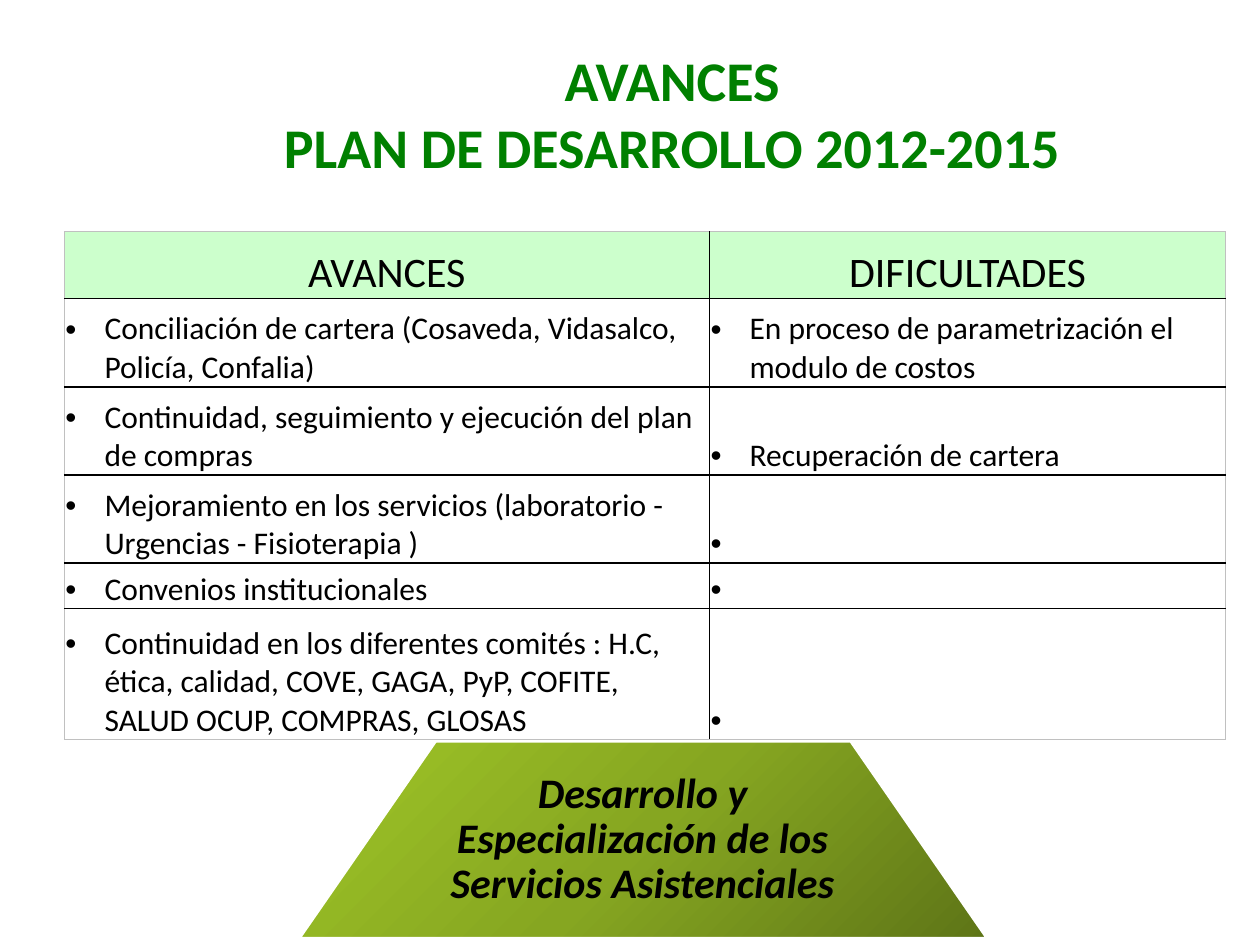
from lxml import etree
from pptx import Presentation
from pptx.dml.color import RGBColor
from pptx.enum.shapes import MSO_SHAPE
from pptx.enum.text import MSO_ANCHOR, MSO_AUTO_SIZE, PP_ALIGN
from pptx.oxml.ns import qn
from pptx.util import Inches, Pt

TRAPEZOID = MSO_SHAPE.TRAPEZOID
BOTTOM, MIDDLE, TOP = MSO_ANCHOR.BOTTOM, MSO_ANCHOR.MIDDLE, MSO_ANCHOR.TOP
GROW = MSO_AUTO_SIZE.SHAPE_TO_FIT_TEXT
LEFT, CENTER = PP_ALIGN.LEFT, PP_ALIGN.CENTER


def rgb(code):
    return RGBColor.from_string(code)


def write(frame, text, font="Calibri", size=18, color="000000", bold=False,
          italic=False, align=LEFT, spacing=None, bullet=None):
    for number, line in enumerate(text.split("\n")):
        paragraph = frame.add_paragraph() if number else frame.paragraphs[0]
        paragraph.alignment = align
        if spacing:
            paragraph.line_spacing = spacing
        if bullet:
            indent = Inches(0.31)
            properties = paragraph._p.get_or_add_pPr()
            properties.set("marL", str(indent))
            properties.set("indent", str(-indent))
            etree.SubElement(properties, qn("a:buFont"), typeface="Arial")
            etree.SubElement(properties, qn("a:buChar"), char=bullet)
        run = paragraph.add_run()
        run.text = line
        run.font.name = font
        run.font.size = Pt(size)
        run.font.bold = bold
        run.font.italic = italic
        run.font.color.rgb = rgb(color)


class PlanSlide:
    ink = "000000"
    edge = "C0C0C0"
    heading_green = "008000"
    header_fill = "CCFFCC"
    gradient = [(0, "5E7517"), (50, "86A621"), (100, "9FC527")]

    def __init__(self, deck):
        self.slide = deck.slides.add_slide(deck.slide_layouts[6])

    def text(self, box, text, inset=None, anchor=TOP, grow=False, **style):
        frame = self.slide.shapes.add_textbox(*map(Inches, box)).text_frame
        frame.word_wrap = True
        frame.vertical_anchor = anchor
        if grow:
            frame.auto_size = GROW
        if inset is not None:
            frame.margin_left = frame.margin_right = Inches(inset)
            frame.margin_top = frame.margin_bottom = Inches(inset)
        write(frame, text, **style)

    def trapezoid(self, box, slant):
        base = self.slide.shapes.add_shape(TRAPEZOID, *map(Inches, box))
        base.adjustments[0] = slant
        base.shadow.inherit = False
        base.line.color.rgb = rgb("FFFFFF")
        base.line.width = Pt(2)
        base.fill.background()
        empty_fill = base._element.spPr.find(qn("a:noFill"))
        shade = etree.Element(qn("a:gradFill"), rotWithShape="1")
        stops = etree.SubElement(shade, qn("a:gsLst"))
        for position, color in self.gradient:
            stop = etree.SubElement(stops, qn("a:gs"), pos=str(position * 1000))
            etree.SubElement(stop, qn("a:srgbClr"), val=color)
        focus = etree.SubElement(shade, qn("a:path"), path="circle")
        etree.SubElement(focus, qn("a:fillToRect"), l="100000", t="100000")
        base._element.spPr.replace(empty_fill, shade)

    def borders(self, cell, colors):
        properties = cell._tc.get_or_add_tcPr()
        for position, (side, color) in enumerate(colors.items()):
            width = Pt(1) if color == self.ink else Pt(0.5)
            line = etree.Element(qn("a:ln" + side), w=str(width))
            fill = etree.SubElement(line, qn("a:solidFill"))
            etree.SubElement(fill, qn("a:srgbClr"), val=color)
            properties.insert(position, line)

    def table(self, box, widths, heights, rows):
        grid = self.slide.shapes.add_table(
            len(rows), len(widths), *map(Inches, box)).table
        grid.first_row = grid.horz_banding = False
        for column, width in zip(grid.columns, widths):
            column.width = Inches(width)
        for row, height in zip(grid.rows, heights):
            row.height = Inches(height)
        last_row, last_column = len(rows) - 1, len(widths) - 1
        for r, entries in enumerate(rows):
            for c, entry in enumerate(entries):
                cell = grid.cell(r, c)
                cell.vertical_anchor = BOTTOM
                cell.margin_left = cell.margin_right = Inches(0.01)
                cell.margin_top, cell.margin_bottom = Inches(0.01), 0
                if r == 0:
                    cell.fill.solid()
                    cell.fill.fore_color.rgb = rgb(self.header_fill)
                    write(cell.text_frame, entry, size=24, align=CENTER)
                else:
                    cell.fill.background()
                    write(cell.text_frame, entry, bullet="•")
                outer = {"L": c == 0, "R": c == last_column,
                         "T": r == 0, "B": r == last_row}
                self.borders(cell, {side: self.edge if is_outer else self.ink
                                    for side, is_outer in outer.items()})


def main():
    deck = Presentation()
    deck.slide_width, deck.slide_height = Inches(10), Inches(7.5)
    plan = PlanSlide(deck)
    plan.trapezoid((2.37, 5.88, 5.47, 1.57), slant=0.692)
    plan.text((3.32, 5.88, 3.56, 1.57),
              "Desarrollo y Especialización de los Servicios Asistenciales",
              inset=0.03, anchor=MIDDLE, size=24, bold=True, italic=True,
              align=CENTER, spacing=0.9)
    progress = [
        ("AVANCES", "DIFICULTADES"),
        ("Conciliación de cartera (Cosaveda, Vidasalco, Policía, Confalia)",
         "En proceso de parametrización el modulo de costos"),
        ("Continuidad, seguimiento y ejecución del plan de compras",
         "Recuperación de cartera"),
        ("Mejoramiento en los servicios (laboratorio - Urgencias - Fisioterapia )", " "),
        ("Convenios institucionales", " "),
        ("Continuidad en los diferentes comités : H.C, ética, calidad, COVE, "
         "GAGA, PyP, COFITE, SALUD OCUP, COMPRAS, GLOSAS", " "),
    ]
    plan.table((0.51, 1.84, 9.22, 4.04), [5.12, 4.1],
               [0.53, 0.7, 0.7, 0.7, 0.36, 1.04], progress)
    plan.text((1.33, 0.31, 8.01, 1.18), "AVANCES\nPLAN DE DESARROLLO 2012-2015",
              grow=True, size=32, color=plan.heading_green, bold=True, align=CENTER)
    deck.save("out.pptx")


if __name__ == "__main__":
    main()
